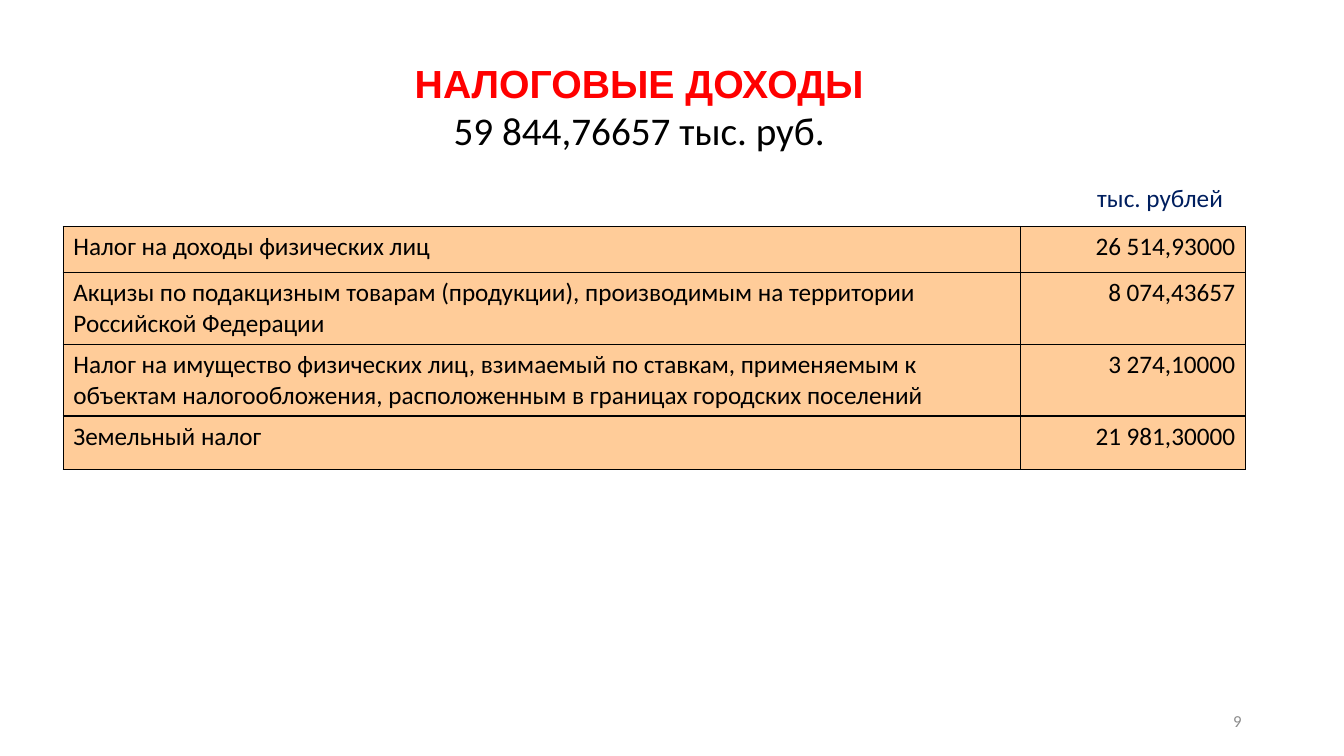
from lxml import etree
from pptx import Presentation
from pptx.dml.color import RGBColor
from pptx.enum.text import MSO_ANCHOR, MSO_AUTO_SIZE, PP_ALIGN
from pptx.oxml.ns import qn
from pptx.util import Pt

LEFT, CENTER, RIGHT = PP_ALIGN.LEFT, PP_ALIGN.CENTER, PP_ALIGN.RIGHT
TOP, MIDDLE = MSO_ANCHOR.TOP, MSO_ANCHOR.MIDDLE
NO_AUTOFIT = MSO_AUTO_SIZE.NONE
TITLE_ONLY = 5
COLORS = {
    "heading": "FF0000",
    "text": "000000",
    "unit": "001F5F",
    "number": "8C8C8C",
    "cell": "FFCC99",
    "border": "000000",
}
HEADING = {"name": "Arial", "size": Pt(28), "bold": True}
TOTAL = {"name": "Calibri", "size": Pt(28), "bold": False}
BODY = {"name": "Calibri", "size": Pt(18), "bold": False}
SMALL = {"name": "Calibri", "size": Pt(12), "bold": False}
TAXES = [
    ("Налог на доходы физических лиц", "26 514,93000"),
    ("Акцизы по подакцизным товарам (продукции), производимым на территории "
     "Российской Федерации", "8 074,43657"),
    ("Налог на имущество физических лиц, взимаемый по ставкам, применяемым к "
     "объектам налогообложения, расположенным в границах городских поселений",
     "3 274,10000"),
    ("Земельный налог", "21 981,30000"),
]


class SlideBuilder:
    """Adds styled elements to one slide, with lengths in points."""

    def __init__(self, slide):
        self.slide = slide

    def fill_para(self, para, text, style, color, align):
        para.alignment = align
        span = para.add_run()
        span.text = text
        for key, value in style.items():
            setattr(span.font, key, value)
        span.font.color.rgb = RGBColor.from_string(COLORS[color])

    def title(self, lines, area):
        box = self.slide.shapes.title
        for key, value in zip(("left", "top", "width", "height"), area):
            setattr(box, key, Pt(value))
        frame = box.text_frame
        settings = {"auto_size": NO_AUTOFIT, "vertical_anchor": TOP, "word_wrap": True,
                    "margin_top": Pt(6.5), "margin_bottom": Pt(0)}
        for key, value in settings.items():
            setattr(frame, key, value)
        for index, (text, style, color) in enumerate(lines):
            para = frame.add_paragraph() if index else frame.paragraphs[0]
            self.fill_para(para, text, style, color, CENTER)

    def label(self, text, area, style, color, align=LEFT, anchor=TOP):
        box = self.slide.shapes.add_textbox(*map(Pt, area))
        frame = box.text_frame
        frame.word_wrap = True
        frame.vertical_anchor = anchor
        self.fill_para(frame.paragraphs[0], text, style, color, align)

    def borders(self, cell):
        properties = cell._tc.get_or_add_tcPr()
        for index, side in enumerate(("lnL", "lnR", "lnT", "lnB")):
            line = etree.Element(qn(f"a:{side}"), w=str(Pt(1)))
            fill = etree.SubElement(line, qn("a:solidFill"))
            etree.SubElement(fill, qn("a:srgbClr"), val=COLORS["border"])
            properties.insert(index, line)

    def table(self, rows, left, top, widths, heights):
        area = (left, top, sum(widths), sum(heights))
        table = self.slide.shapes.add_table(len(rows), len(widths), *map(Pt, area)).table
        table.first_row = table.horz_banding = False
        for column, width in zip(table.columns, widths):
            column.width = Pt(width)
        for row, height, texts in zip(table.rows, heights, rows):
            row.height = Pt(height)
            for cell, text, align in zip(row.cells, texts, (LEFT, RIGHT)):
                cell.fill.solid()
                cell.fill.fore_color.rgb = RGBColor.from_string(COLORS["cell"])
                self.borders(cell)
                self.fill_para(cell.text_frame.paragraphs[0], text, BODY, "text", align)


def main():
    deck = Presentation()
    deck.slide_width, deck.slide_height = Pt(960), Pt(540)
    page = SlideBuilder(deck.slides.add_slide(deck.slide_layouts[TITLE_ONLY]))
    page.title([("НАЛОГОВЫЕ ДОХОДЫ", HEADING, "heading"),
                ("59 844,76657 тыс. руб.", TOTAL, "text")], (216.5, 36, 480, 75))
    page.table(TAXES, 45.2, 161.8, (683.5, 160.8), (33, 50.4, 50.4, 38))
    page.label("тыс. рублей", (776.7, 126.7, 113, 29), BODY, "unit")
    page.label("9", (678, 500.5, 216, 28.8), SMALL, "number", RIGHT, MIDDLE)
    deck.save("out.pptx")


if __name__ == "__main__":
    main()
